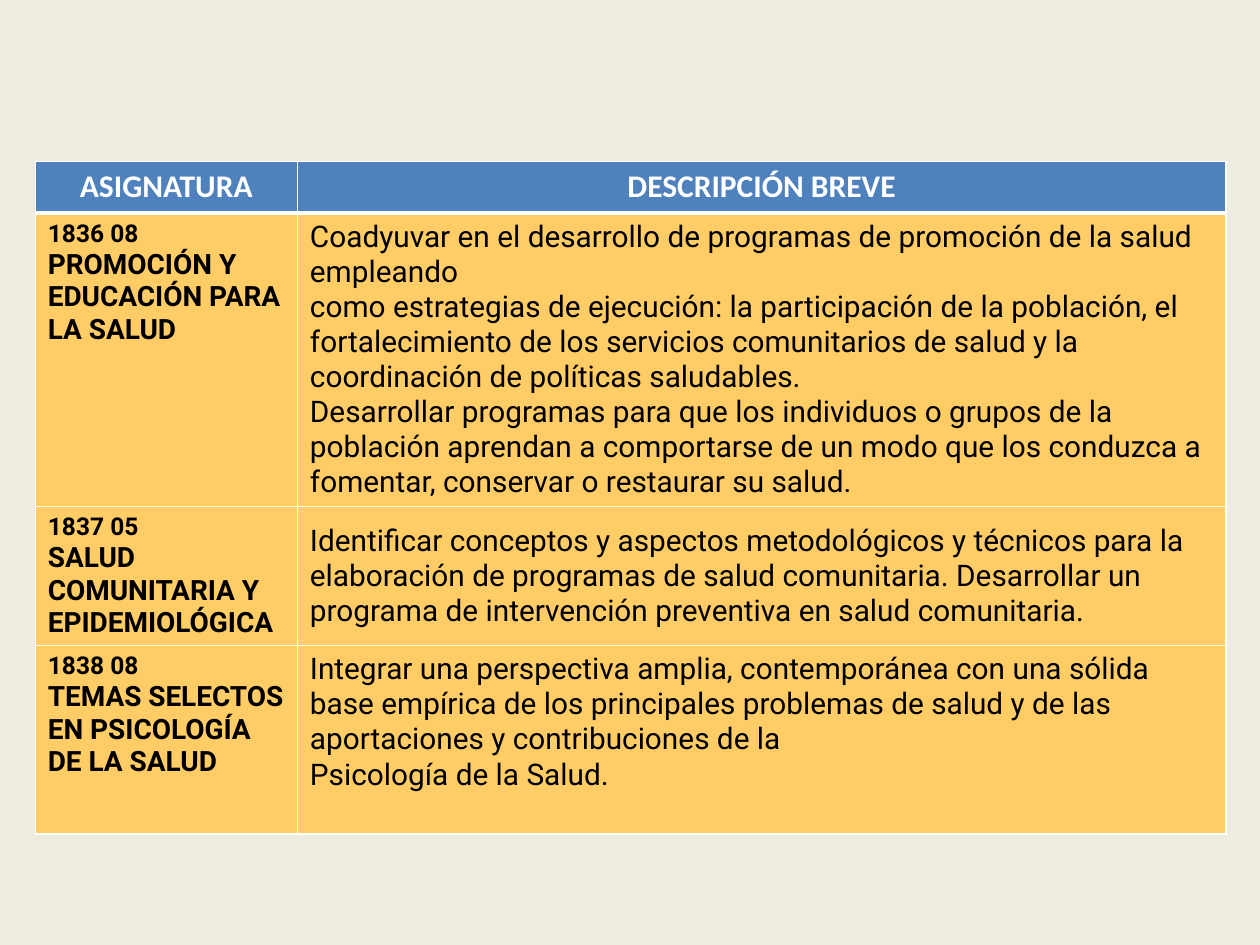
import pptx
import pptx.dml.color
import pptx.enum.text
import pptx.oxml
import pptx.oxml.ns
import pptx.util

COLORS = {"background": "EEECE1", "header": "4F81BD", "body": "FFCC66",
          "white": "FFFFFF", "black": "000000"}
ALIGN = pptx.enum.text.PP_ALIGN
ANCHOR = pptx.enum.text.MSO_ANCHOR
INCH = pptx.util.Inches

FORMATS = {
    "header": {"name": "Calibri", "size": pptx.util.Pt(18), "bold": True},
    "code": {"name": "Roboto", "size": pptx.util.Pt(14), "bold": True},
    "subject": {"name": "Roboto", "size": pptx.util.Pt(16), "bold": True},
    "description": {"name": "Roboto", "size": pptx.util.Pt(17), "bold": False},
}
TABLE_BOX = (0.28, 1.28, 9.45, 5.33)
COLUMN_WIDTHS = (2.08, 7.37)
ROW_HEIGHTS = (0.41, 2.33, 1.1, 1.49)
LAST_BOTTOM_MARGIN = 0.33

HEADINGS = ("ASIGNATURA", "DESCRIPCIÓN BREVE")
COURSES = [
    ("1836 08", "PROMOCIÓN Y EDUCACIÓN PARA LA SALUD", [
        "Coadyuvar en el desarrollo de programas de promoción de la salud empleando",
        "como estrategias de ejecución: la participación de la población, el "
        "fortalecimiento de los servicios comunitarios de salud y la "
        "coordinación de políticas saludables.",
        "Desarrollar programas para que los individuos o grupos de la población "
        "aprendan a comportarse de un modo que los conduzca a fomentar, "
        "conservar o restaurar su salud.",
    ]),
    ("1837 05", "SALUD COMUNITARIA Y EPIDEMIOLÓGICA", [
        "Identificar conceptos y aspectos metodológicos y técnicos para la "
        "elaboración de programas de salud comunitaria. Desarrollar un programa "
        "de intervención preventiva en salud comunitaria.",
    ]),
    ("1838 08", "TEMAS SELECTOS EN PSICOLOGÍA DE LA SALUD", [
        "Integrar una perspectiva amplia, contemporánea con una sólida base "
        "empírica de los principales problemas de salud y de las aportaciones "
        "y contribuciones de la",
        "Psicología de la Salud.",
    ]),
]


def rgb(color):
    return pptx.dml.color.RGBColor.from_string(COLORS[color])


def set_borders(cell, widths):
    properties = cell._tc.get_or_add_tcPr()
    for side, width in widths.items():
        properties.append(pptx.oxml.parse_xml(
            f'<a:ln{side} {pptx.oxml.ns.nsdecls("a")} w="{pptx.util.Pt(width)}">'
            f'<a:solidFill><a:srgbClr val="{COLORS["white"]}"/></a:solidFill>'
            f'</a:ln{side}>'))


def fill_cell(cell, lines, fill, color, bottom=1, top=1,
              anchor=ANCHOR.TOP, alignment=ALIGN.LEFT):
    set_borders(cell, {"L": 1, "R": 1, "T": top, "B": bottom})
    cell.fill.solid()
    cell.fill.fore_color.rgb = rgb(fill)
    cell.vertical_anchor = anchor
    frame = cell.text_frame
    for index, (text, style) in enumerate(lines):
        paragraph = frame.add_paragraph() if index else frame.paragraphs[0]
        paragraph.alignment = alignment
        run = paragraph.add_run()
        run.text = text
        for attribute, value in FORMATS[style].items():
            setattr(run.font, attribute, value)
        run.font.color.rgb = rgb(color)


def add_course_table(slide, box):
    shape = slide.shapes.add_table(len(COURSES) + 1, len(HEADINGS), *map(INCH, box))
    table = shape.table
    for column, width in zip(table.columns, COLUMN_WIDTHS):
        column.width = INCH(box[2] * width / sum(COLUMN_WIDTHS))
    for row, height in zip(table.rows, ROW_HEIGHTS):
        row.height = INCH(box[3] * height / sum(ROW_HEIGHTS))
    for index, heading in enumerate(HEADINGS):
        fill_cell(table.cell(0, index), [(heading, "header")], "header", "white",
                  bottom=3, alignment=ALIGN.CENTER)
    for index, (code, subject, description) in enumerate(COURSES, 1):
        top = 3 if index == 1 else 1
        fill_cell(table.cell(index, 0), [(code, "code"), (subject, "subject")],
                  "body", "black", top=top)
        fill_cell(table.cell(index, 1), [(text, "description") for text in description],
                  "body", "black", top=top, anchor=ANCHOR.MIDDLE)
    table.cell(len(COURSES), 1).margin_bottom = INCH(LAST_BOTTOM_MARGIN)


def main():
    presentation = pptx.Presentation()
    presentation.slide_width = INCH(10)
    presentation.slide_height = INCH(7.5)
    slide = presentation.slides.add_slide(presentation.slide_layouts[6])
    slide.background.fill.solid()
    slide.background.fill.fore_color.rgb = rgb("background")
    add_course_table(slide, TABLE_BOX)
    presentation.save("out.pptx")


if __name__ == "__main__":
    main()
